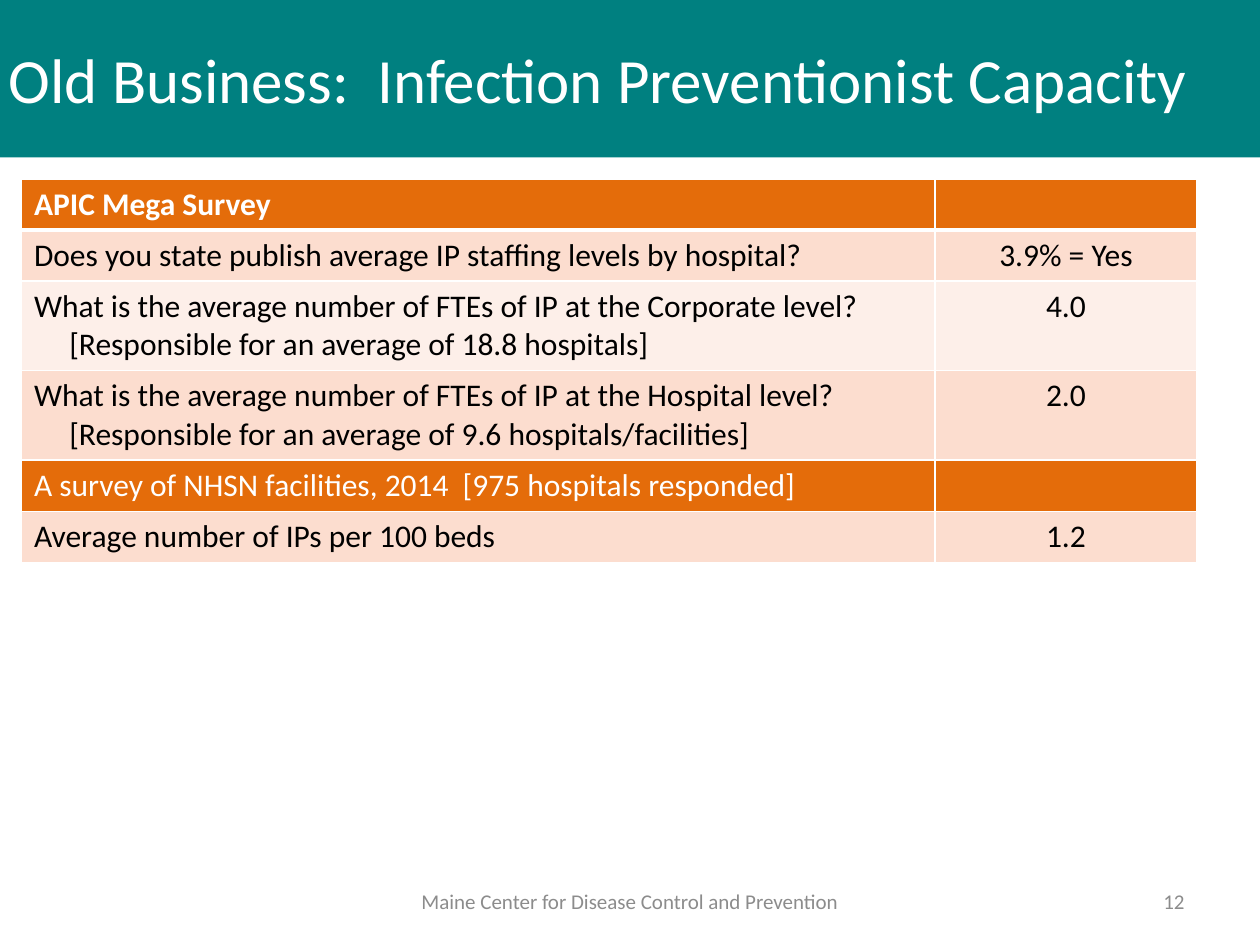
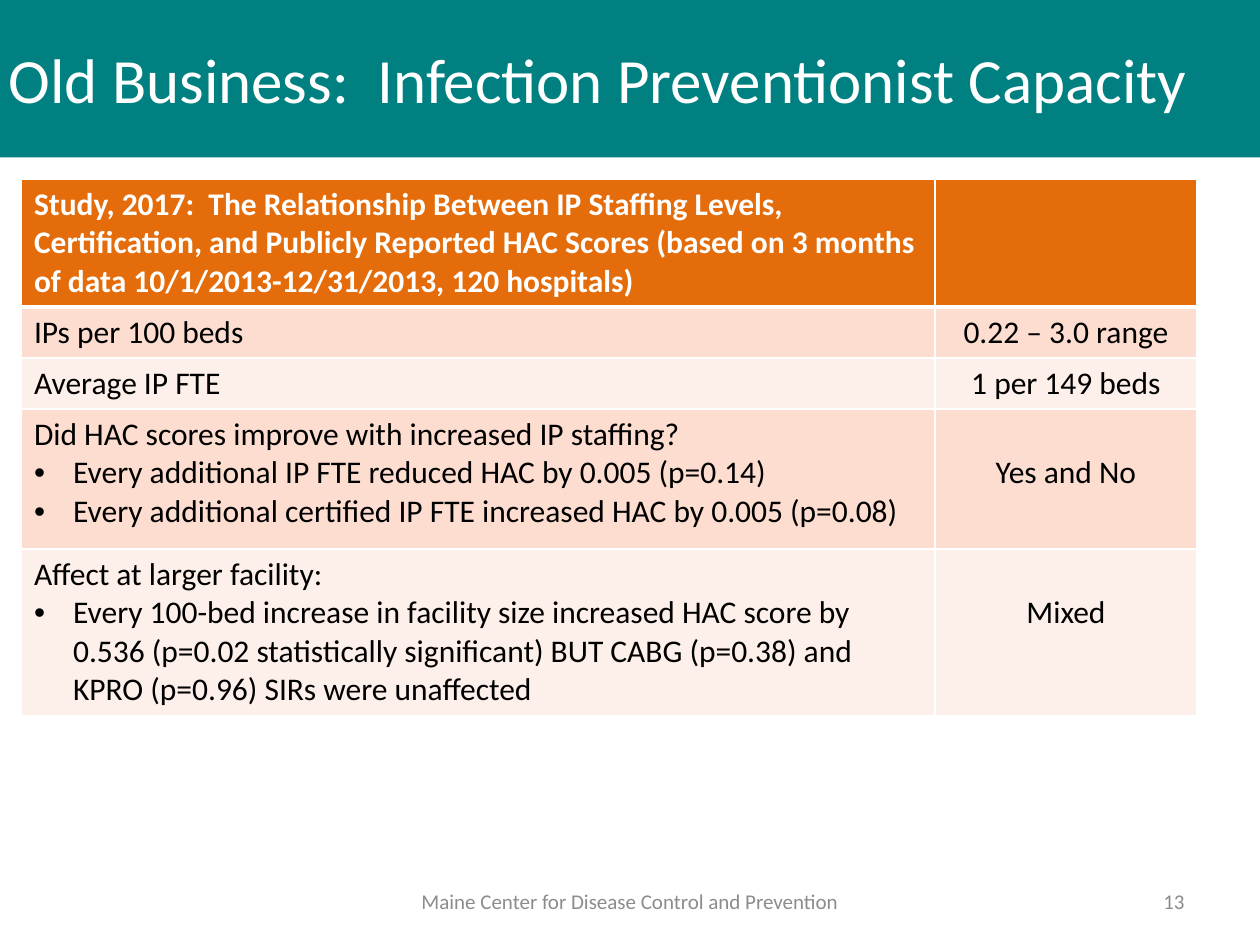
from pptx import Presentation
from pptx.dml.color import RGBColor
from pptx.enum.text import MSO_ANCHOR as Anchor, MSO_AUTO_SIZE as AutoSize, PP_ALIGN as Align
from pptx.oxml.ns import qn
from pptx.util import Inches, Pt
from lxml import etree

FONT = "Calibri"
TEAL, ORANGE, PINK, PALE = "008080", "E46C0A", "FCDDCF", "FDEFE9"
WHITE, BLACK, GRAY = "FFFFFF", "000000", "8C8C8C"

TITLE = "Old Business:  Infection Preventionist Capacity"
FOOTER = "Maine Center for Disease Control and Prevention"
COLUMNS = (7.25, 2.08)
LINE = 0.305  # height of one 18 pt line, in inches
NOTE, BULLET = "note", "bullet"

# Each row: fill, height, question paragraphs (text or (kind, text)), answer, lines above the answer
SURVEY_ROWS = [
    (ORANGE, 0.4, ["APIC Mega Survey"], "", 0),
    (PINK, 0.4, ["Does you state publish average IP staffing levels by hospital?"], "3.9% = Yes", 0),
    (PALE, 0.71, ["What is the average number of FTEs of IP at the Corporate level?",
                  (NOTE, "[Responsible for an average of 18.8 hospitals]")], "4.0", 0),
    (PINK, 0.71, ["What is the average number of FTEs of IP at the Hospital level?",
                  (NOTE, "[Responsible for an average of 9.6 hospitals/facilities]")], "2.0", 0),
    (ORANGE, 0.4, ["A survey of NHSN facilities, 2014  [975 hospitals responded]"], "", 0),
    (PINK, 0.4, ["Average number of IPs per 100 beds"], "1.2", 0),
]
STUDY_ROWS = [
    (ORANGE, 1.01, ["Study, 2017:  The Relationship Between IP Staffing Levels, Certification, and "
                    "Publicly Reported HAC Scores (based on 3 months of data "
                    "10/1/2013-12/31/2013, 120 hospitals)"], "", 0),
    (PINK, 0.4, ["IPs per 100 beds"], "0.22 – 3.0 range", 0),
    (PALE, 0.4, ["Average IP FTE"], "1 per 149 beds", 0),
    (PINK, 1.11, ["Did HAC scores improve with increased IP staffing?",
                  (BULLET, "Every additional IP FTE reduced HAC by 0.005 (p=0.14)"),
                  (BULLET, "Every additional certified IP FTE increased HAC by 0.005 (p=0.08)")],
     "Yes and No", 1),
    (PALE, 1.32, ["Affect at larger facility:",
                  (BULLET, "Every 100-bed increase in facility size increased HAC score by 0.536 "
                           "(p=0.02 statistically significant) BUT CABG (p=0.38) and KPRO (p=0.96) "
                           "SIRs were unaffected")], "Mixed", 1),
]


def rgb(color):
    return RGBColor.from_string(color)


def write(p, text, size=18, color=BLACK, bold=False, align=Align.LEFT):
    p.alignment = align
    r = p.add_run()
    r.text = text
    r.font.name, r.font.size, r.font.bold = FONT, Pt(size), bold
    r.font.color.rgb = rgb(color)


def indent(p, kind):
    """Indent a note, or hang a bullet."""
    pPr = p._p.get_or_add_pPr()
    if kind == NOTE:
        pPr.set("marL", str(Inches(0.28)))
    else:
        pPr.set("marL", str(Inches(0.31)))
        pPr.set("indent", str(-Inches(0.31)))
        etree.SubElement(pPr, qn("a:buFont"), typeface="Arial")
        etree.SubElement(pPr, qn("a:buChar"), char="•")


def set_borders(cell, top=1, bottom=1):
    tcPr = cell._tc.get_or_add_tcPr()
    for side, width in (("L", 1), ("R", 1), ("T", top), ("B", bottom)):
        ln = etree.SubElement(tcPr, qn(f"a:ln{side}"), w=str(Pt(width)))
        fill = etree.SubElement(ln, qn("a:solidFill"))
        etree.SubElement(fill, qn("a:srgbClr"), val=WHITE)


def add_title(s, left, top, width, height):
    sp = s.shapes.title
    sp.left, sp.top, sp.width, sp.height = map(Inches, (left, top, width, height))
    sp.fill.solid()
    sp.fill.fore_color.rgb = rgb(TEAL)
    tf = sp.text_frame
    tf.auto_size, tf.vertical_anchor, tf.word_wrap = AutoSize.NONE, Anchor.MIDDLE, True
    write(tf.paragraphs[0], TITLE, size=36, color=WHITE)


def add_small_text(s, text, left, top, width, height, align):
    tf = s.shapes.add_textbox(*map(Inches, (left, top, width, height))).text_frame
    tf.word_wrap, tf.vertical_anchor = True, Anchor.MIDDLE
    write(tf.paragraphs[0], text, size=12, color=GRAY, align=align)


def add_footer(s, number, top=6.95, height=0.4):
    add_small_text(s, FOOTER, 3, top, 4, height, Align.CENTER)
    add_small_text(s, str(number), 7.17, top, 2.33, height, Align.RIGHT)


def fill_question(cell, paragraphs, **style):
    tf = cell.text_frame
    for i, item in enumerate(paragraphs):
        kind, text = (None, item) if isinstance(item, str) else item
        p = tf.add_paragraph() if i else tf.paragraphs[0]
        write(p, text, **style)
        if kind:
            indent(p, kind)


def add_findings_table(s, rows, left, top):
    height = sum(row[1] for row in rows)
    box = map(Inches, (left, top, sum(COLUMNS), height))
    table = s.shapes.add_table(len(rows), len(COLUMNS), *box).table
    table.first_row = table.horz_banding = False
    for column, width in zip(table.columns, COLUMNS):
        column.width = Inches(width)
    for i, (fill, row_height, question, answer, lines_above) in enumerate(rows):
        table.rows[i].height = Inches(row_height)
        left_cell, right_cell = table.cell(i, 0), table.cell(i, 1)
        for cell in (left_cell, right_cell):
            set_borders(cell, top=3 if i == 1 else 1, bottom=3 if i == 0 else 1)
            cell.fill.solid()
            cell.fill.fore_color.rgb = rgb(fill)
        fill_question(left_cell, question, color=WHITE if fill == ORANGE else BLACK, bold=i == 0)
        if answer:
            right_cell.margin_top = Inches(0.05 + LINE * lines_above)
            write(right_cell.text_frame.paragraphs[0], answer, align=Align.CENTER)


def add_findings_slide(prs, number, rows):
    s = prs.slides.add_slide(prs.slide_layouts[5])
    add_title(s, -0.03, 0, 10.03, 1.25)
    add_findings_table(s, rows, 0.17, 1.42)
    add_footer(s, number)


def main():
    prs = Presentation()
    prs.slide_width, prs.slide_height = Inches(10), Inches(7.5)
    for number, rows in enumerate((SURVEY_ROWS, STUDY_ROWS), start=12):
        add_findings_slide(prs, number, rows)
    prs.save("out.pptx")


if __name__ == "__main__":
    main()
